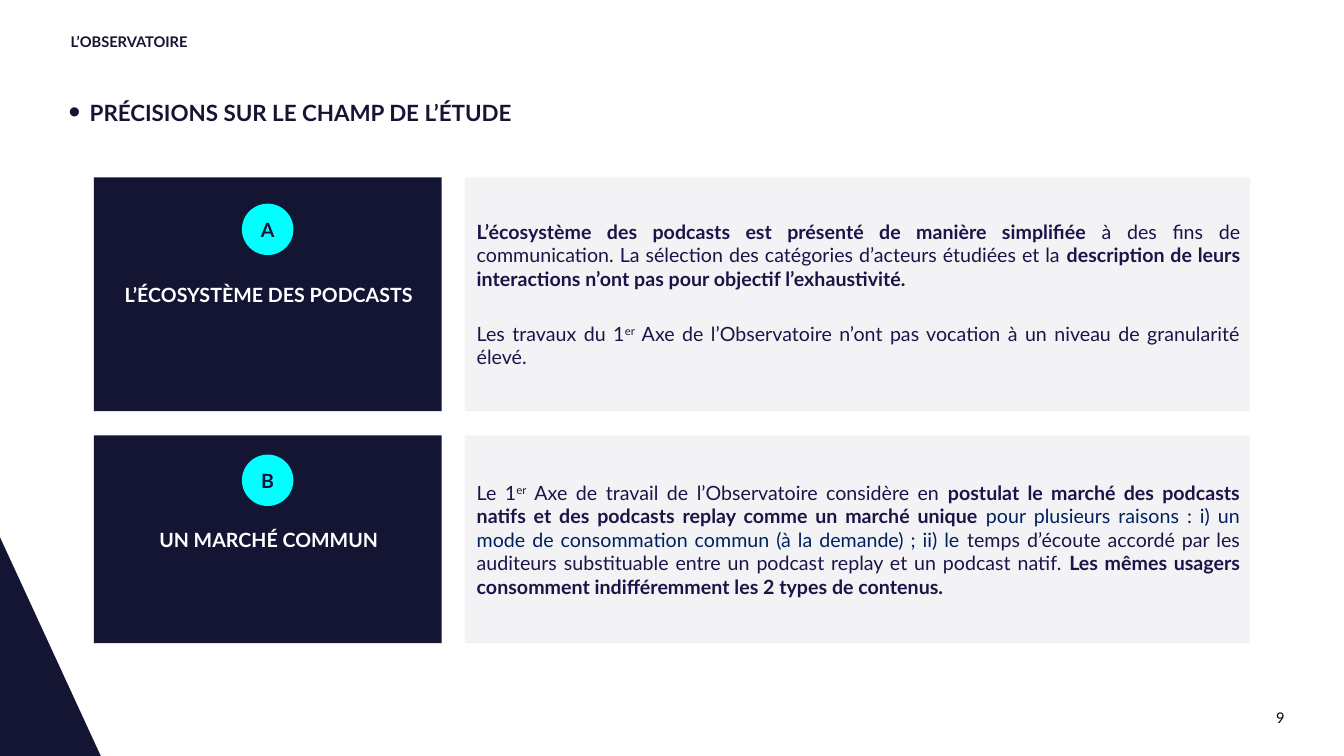
from dataclasses import dataclass

from lxml import etree
from pptx import Presentation, util as u
from pptx.dml.color import RGBColor
from pptx.enum import shapes, text
from pptx.oxml.ns import qn


@dataclass(frozen=True)
class Theme:
    face: str = "Lato"
    navy: str = "141433"
    ink: str = "1E1348"
    blue: str = "002060"
    cyan: str = "00FFFF"
    pale: str = "F3F3F5"
    white: str = "FFFFFF"
    black: str = "000000"
    small: float = 10.5
    text: float = 14
    head: float = 16


LOOK = Theme()
LEFT, MID, RIGHT, JUST = (text.PP_ALIGN.LEFT, text.PP_ALIGN.CENTER,
                          text.PP_ALIGN.RIGHT, text.PP_ALIGN.JUSTIFY)
BOLD = {"bold": True}
SUP = {"sup": True}
BLUE = {"color": LOOK.blue}


def write(frame, paras, size=LOOK.text, color=LOOK.navy, bold=False, align=LEFT,
          pad=(0.1, 0.05, 0.1, 0.05), anchor=text.MSO_ANCHOR.MIDDLE,
          left=0, hang=0, gap=0, lead=1.0, mark=None):
    frame.word_wrap = True
    frame.auto_size = text.MSO_AUTO_SIZE.NONE
    frame.vertical_anchor = anchor
    (frame.margin_left, frame.margin_top,
     frame.margin_right, frame.margin_bottom) = map(u.Inches, pad)
    if isinstance(paras, str):
        paras = [[(paras, {})]]
    for i, runs in enumerate(paras):
        para = frame.add_paragraph() if i else frame.paragraphs[0]
        prop = para._p.get_or_add_pPr()
        prop.set("marL", str(u.Inches(left)))
        prop.set("indent", str(u.Inches(-hang)))
        if mark:
            etree.SubElement(prop, qn("a:buSzPct")).set("val", "150000")
            etree.SubElement(prop, qn("a:buChar")).set("char", mark)
        para.alignment = align
        para.line_spacing = lead
        para.space_before = u.Pt(gap if i else 0)
        for words, style in runs:
            run = para.add_run()
            run.text = words
            font = run.font
            font.name, font.size = LOOK.face, u.Pt(size)
            font.bold = style.get("bold", bold)
            font.color.rgb = RGBColor.from_string(style.get("color", color))
            if style.get("sup"):
                run._r.get_or_add_rPr().set("baseline", "30000")


class Deck:
    def __init__(self, look):
        self.look = look
        self.file = Presentation()
        self.file.slide_width = u.Inches(13.33)
        self.file.slide_height = u.Inches(7.5)
        self.slide = self.file.slides.add_slide(self.file.slide_layouts[1])

    def area(self, x, y, w, h):
        wide, high = self.file.slide_width, self.file.slide_height
        return [int(part * full / 100)
                for part, full in ((x, wide), (y, high), (w, wide), (h, high))]

    def paint(self, shape, color):
        shape.shadow.inherit = False
        shape.fill.solid()
        shape.fill.fore_color.rgb = RGBColor.from_string(color)
        shape.line.fill.background()

    def holder(self, index, area, words, **form):
        shape = self.slide.placeholders[index]
        shape.left, shape.top, shape.width, shape.height = self.area(*area)
        write(shape.text_frame, words, bold=True, **form)

    def label(self, area, words, **form):
        shape = self.slide.shapes.add_textbox(*self.area(*area))
        write(shape.text_frame, words, **form)

    def block(self, kind, area, fill, words, **form):
        shape = self.slide.shapes.add_shape(kind, *self.area(*area))
        self.paint(shape, fill)
        write(shape.text_frame, words, **form)

    def wedge(self, points):
        first, *rest = [self.area(x, y, 0, 0)[:2] for x, y in points]
        path = self.slide.shapes.build_freeform(*first)
        path.add_line_segments(rest, close=True)
        self.paint(path.convert_to_shape(), self.look.navy)

    def card(self, top, high, drop, key, name, paras):
        look, rect = self.look, shapes.MSO_SHAPE.RECTANGLE
        self.block(rect, (6.98, top, 25.88, high), look.navy, name,
                   color=look.white, bold=True, align=MID, left=0.02)
        self.block(rect, (34.58, top, 58.44, high), look.pale, paras,
                   color=look.ink, align=JUST, left=0.02, gap=22.5)
        self.block(shapes.MSO_SHAPE.OVAL, (18, top + drop, 3.83, 6.8), look.cyan,
                   key, bold=True, align=MID)


def main():
    deck = Deck(LOOK)
    deck.wedge([(0, 100), (7.5, 100), (0, 71.07)])
    deck.holder(0, (4.5, 4.53, 44.34, 2.13), "L’OBSERVATOIRE",
                size=LOOK.small, pad=(0.1, 0, 0.1, 0), lead=0.9)
    deck.holder(1, (4.5, 12.4, 94.2, 4.93), "PRÉCISIONS SUR LE CHAMP DE L’ÉTUDE",
                size=LOOK.head, pad=(0.08, 0.05, 0.1, 0.05),
                anchor=text.MSO_ANCHOR.TOP, left=0.21, hang=0.21, mark="•")
    deck.card(23.47, 30.93, 3.47, "A", "L’ÉCOSYSTÈME DES PODCASTS", [
        [("L’écosystème des podcasts est présenté de manière simplifiée ", BOLD),
         ("à des fins de communication. La sélection des catégories d’acteurs "
          "étudiées et la ", {}),
         ("description de leurs interactions n’ont pas pour objectif "
          "l’exhaustivité.", BOLD)],
        [("Les travaux du 1", {}), ("er", SUP),
         (" Axe de l’Observatoire n’ont pas vocation à un niveau de granularité "
          "élevé.", {})],
    ])
    deck.card(57.6, 27.47, 2.53, "B", "UN MARCHÉ COMMUN", [
        [("Le 1", {}), ("er", SUP),
         (" Axe de travail de l’Observatoire considère en ", {}),
         ("postulat le marché des podcasts natifs et des podcasts replay comme "
          "un marché unique ", BOLD),
         ("pour plusieurs raisons : i) un mode de consommation commun "
          "(à la demande) ; ii) le ", BLUE),
         ("temps d’écoute accordé par les auditeurs substituable entre un podcast "
          "replay et un podcast natif. ", {}),
         ("Les mêmes usagers consomment indifféremment les 2 types de contenus.",
          BOLD)],
    ])
    deck.label((73.07, 93.73, 22.51, 2.4), "9", size=LOOK.small,
               color=LOOK.black, align=RIGHT, pad=(0, 0, 0, 0))
    deck.file.save("out.pptx")


if __name__ == "__main__":
    main()
